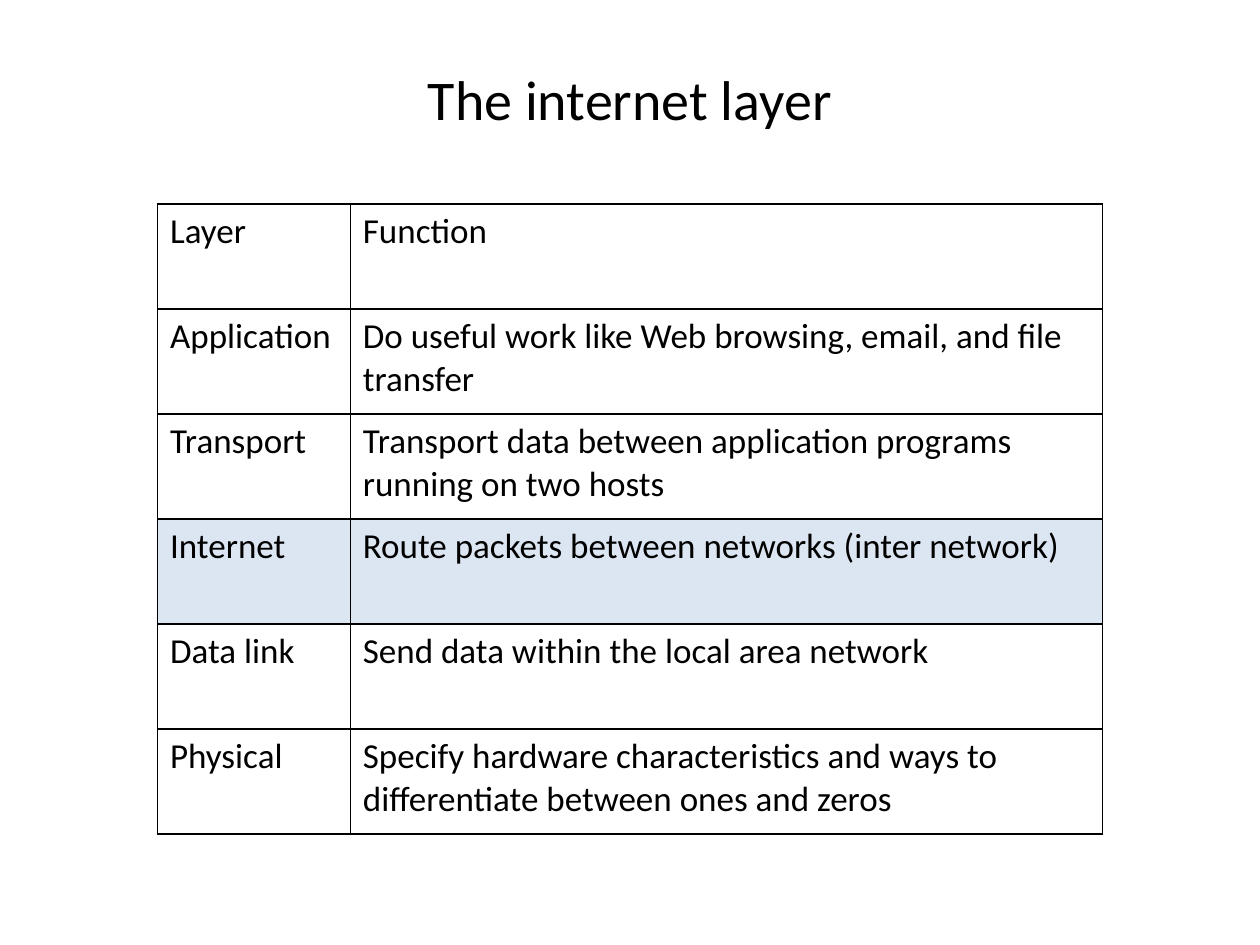
from lxml import etree
from pptx import Presentation
from pptx.dml.color import RGBColor
from pptx.enum.text import MSO_ANCHOR, PP_ALIGN
from pptx.oxml.ns import qn
from pptx.util import Inches, Pt

CENTER = PP_ALIGN.CENTER
MIDDLE = MSO_ANCHOR.MIDDLE
BLACK = RGBColor(0x00, 0x00, 0x00)
PALE_BLUE = RGBColor(0xDC, 0xE6, 0xF2)
TITLE_ONLY = 5

LAYERS = [
    ("Layer", "Function"),
    ("Application", "Do useful work like Web browsing, email, and file transfer"),
    ("Transport", "Transport data between application programs running on two hosts"),
    ("Internet", "Route packets between networks (inter network)"),
    ("Data link", "Send data within the local area network"),
    ("Physical", "Specify hardware characteristics and ways to differentiate between ones and zeros"),
]


class SlideBuilder:
    font_name = "Calibri"
    title_size = Pt(32)
    cell_size = Pt(20)
    border_width = Pt(1)

    def __init__(self, slide):
        self.slide = slide

    def format_paragraph(self, paragraph, size):
        paragraph.font.name = self.font_name
        paragraph.font.size = size
        paragraph.font.color.rgb = BLACK

    def add_title(self, text, left, top, width, height):
        title = self.slide.shapes.title
        title.left, title.top = Inches(left), Inches(top)
        title.width, title.height = Inches(width), Inches(height)
        title.text_frame.text = text
        title.text_frame.vertical_anchor = MIDDLE
        paragraph = title.text_frame.paragraphs[0]
        paragraph.alignment = CENTER
        self.format_paragraph(paragraph, self.title_size)

    def add_borders(self, cell):
        properties = cell._tc.get_or_add_tcPr()
        for position, side in enumerate(("a:lnL", "a:lnR", "a:lnT", "a:lnB")):
            line = etree.Element(qn(side), w=str(self.border_width))
            fill = etree.SubElement(line, qn("a:solidFill"))
            etree.SubElement(fill, qn("a:srgbClr"), val=str(BLACK))
            properties.insert(position, line)

    def add_table(self, rows, left, top, column_widths, height, highlighted):
        frame = self.slide.shapes.add_table(
            len(rows), len(column_widths), Inches(left), Inches(top),
            Inches(sum(column_widths)), Inches(height))
        table = frame.table
        table.first_row = False
        table.horz_banding = False
        for column, width in zip(table.columns, column_widths):
            column.width = Inches(width)
        for row, texts in zip(table.rows, rows):
            row.height = Inches(height / len(rows))
            for cell, text in zip(row.cells, texts):
                cell.text = text
                self.format_paragraph(cell.text_frame.paragraphs[0], self.cell_size)
                if texts[0] == highlighted:
                    cell.fill.solid()
                    cell.fill.fore_color.rgb = PALE_BLUE
                else:
                    cell.fill.background()
                self.add_borders(cell)


def main():
    presentation = Presentation()
    presentation.slide_width = Inches(10)
    presentation.slide_height = Inches(7.5)
    slide = presentation.slides.add_slide(presentation.slide_layouts[TITLE_ONLY])
    builder = SlideBuilder(slide)
    builder.add_title("The internet layer", 0.5, 0.3, 9, 0.95)
    builder.add_table(LAYERS, 1.25, 1.62, (1.53, 5.97), 5, "Internet")
    presentation.save("out.pptx")


if __name__ == "__main__":
    main()
